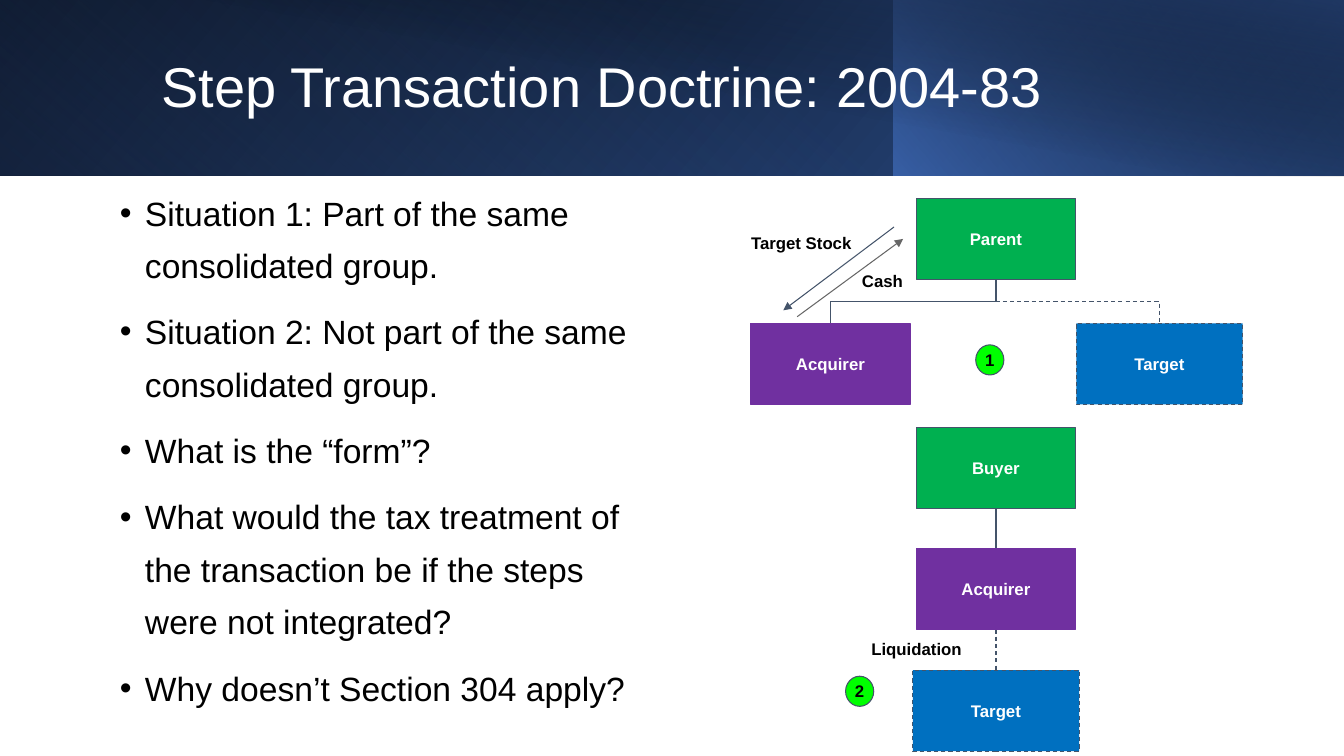
from lxml import etree
from pptx import Presentation
from pptx import util as u
from pptx.dml.color import RGBColor
from pptx.enum import dml, shapes, text
from pptx.oxml.ns import qn

# Content: all lengths in centimetres
TITLE = "Step Transaction Doctrine: 2004-83"
POINTS = [
    "Situation 1: Part of the same consolidated group.",
    "Situation 2: Not part of the same consolidated group.",
    "What is the “form”?",
    "What would the tax treatment of the transaction be if the steps were not integrated?",
    "Why doesn’t Section 304 apply?",
]
GREEN, PURPLE, BLUE, SLATE, GREY = "00B050", "7030A0", "0070C0", "44546A", "666666"
WHITE, BLACK, LIME = "FFFFFF", "000000", "00FF00"

# Banner layers: left, width, height, rotation, flip, angle, stops (place, colour, opacity)
BANNER = [
    (0, 33.87, 4.42, 0, True, 140, [(0, "000000", 100), (100, "2F5597", 100)]),
    (0, 22.56, 4.42, 180, True, 230, [(20, "4472C4", 0), (100, "203864", 55)]),
    (22.53, 11.33, 4.42, 0, True, 220, [(0, "4472C4", 66), (100, "000000", 30)]),
    (1.27, 32.59, 4.45, 0, False, 280, [(50, "000000", 0), (99, "203864", 52)]),
]
MID, LEFT, RIGHT = 25.1, 20.93, 29.22
WIDE, TALL = 4.01, 2.04
# Boxes: name, centre, top, width, fill, line, dashed
BOXES = [
    ("Parent", MID, 5.0, WIDE, GREEN, SLATE, False),
    ("Acquirer", LEFT, 8.15, WIDE, PURPLE, PURPLE, False),
    ("Target", RIGHT, 8.15, 4.19, BLUE, SLATE, True),
    ("Buyer", MID, 10.78, WIDE, GREEN, SLATE, False),
    ("Acquirer", MID, 13.82, WIDE, PURPLE, PURPLE, False),
    ("Target", MID, 16.89, 4.19, BLUE, SLATE, True),
]
STEPS = [("1", 24.59, 8.69), ("2", 21.31, 17.04)]
LABELS = [
    ("Cash", 20.4, 6.58, 3.68, 0.76),
    ("Target Stock", 18.67, 5.61, 3.05, 1.42),
    ("Liquidation", 21.26, 15.85, 3.68, 0.76),
]
# Arrows: tip, tail, colour
ARROWS = [((22.76, 6.02), (20.09, 7.98), GREY), ((19.74, 7.82), (22.53, 5.72), SLATE)]

deck = Presentation()
deck.slide_width, deck.slide_height = u.Cm(33.87), u.Cm(19.05)
slide = deck.slides.add_slide(deck.slide_layouts[5])
parts = slide.shapes


def cms(*vals):
    return [u.Cm(v) for v in vals]


def rgb(code):
    return RGBColor.from_string(code)


def sub(node, tag, **attrs):
    return etree.SubElement(node, qn(tag), {k: str(v) for k, v in attrs.items()})


def stroke(line, color, dash=False):
    line.color.rgb = rgb(color)
    line.width = u.Pt(0.75)
    if dash:
        line.dash_style = dml.MSO_LINE.DASH


def style(para, size, color, bold=False):
    para.font.name, para.font.size, para.font.bold = "Arial", u.Pt(size), bold
    para.font.color.rgb = rgb(color)


def write(shape, words, color, pad=0.25, anchor=text.MSO_ANCHOR.MIDDLE):
    frame = shape.text_frame
    frame.word_wrap, frame.vertical_anchor = True, anchor
    frame.margin_left = frame.margin_right = u.Cm(pad)
    frame.margin_top = frame.margin_bottom = u.Cm(pad)
    frame.text = words
    para = frame.paragraphs[0]
    para.alignment = text.PP_ALIGN.CENTER
    style(para, 12, color, True)


def block(kind, x, y, w, h, fill, line, dash=False):
    shape = parts.add_shape(kind, *cms(x, y, w, h))
    shape.shadow.inherit = False
    shape.fill.solid()
    shape.fill.fore_color.rgb = rgb(fill)
    stroke(shape.line, line, dash)
    return shape


def link(a, b, color=SLATE, dash=False, kind=shapes.MSO_CONNECTOR.STRAIGHT):
    wire = parts.add_connector(kind, *cms(*a, *b))
    stroke(wire.line, color, dash)
    sub(wire._element.spPr, "a:effectLst")
    return wire


def branch(a, b, dash=False):
    """Elbow that leaves a downward: a turned box around the same centre."""
    mx, my = (a[0] + b[0]) / 2, (a[1] + b[1]) / 2
    drop, span = b[1] - a[1], abs(b[0] - a[0])
    side = 1 if b[0] < a[0] else -1
    dx, dy = side * drop / 2, span / 2
    wire = link((mx - dx, my - dy), (mx + dx, my + dy), dash=dash,
                kind=shapes.MSO_CONNECTOR.ELBOW)
    turn = 90 if side > 0 else 270
    wire._element.spPr.find(qn("a:xfrm")).set("rot", str(turn * 60000))


# Banner
for x, w, h, turn, flip, angle, stops in BANNER:
    layer = parts.add_shape(shapes.MSO_SHAPE.RECTANGLE, *cms(x, 0, w, h))
    layer.shadow.inherit = False
    layer.line.fill.background()
    layer.rotation = turn
    props = layer._element.spPr
    if flip:
        props.find(qn("a:xfrm")).set("flipH", "1")
    grad = etree.Element(qn("a:gradFill"))
    marks = sub(grad, "a:gsLst")
    for place, color, solid in stops:
        tint = sub(sub(marks, "a:gs", pos=place * 1000), "a:srgbClr", val=color)
        if solid < 100:
            sub(tint, "a:alpha", val=solid * 1000)
    sub(grad, "a:lin", ang=angle * 60000, scaled=0)
    props.find(qn("a:prstGeom")).addnext(grad)

# Title, brought in front of the banner
title = parts.title
title.left, title.top, title.width, title.height = cms(3.81, 0.81, 27.48, 2.87)
title.text_frame.text = TITLE
title.text_frame.vertical_anchor = text.MSO_ANCHOR.MIDDLE
head = title.text_frame.paragraphs[0]
head.alignment, head.line_spacing = text.PP_ALIGN.LEFT, 0.9
style(head, 40, WHITE)
parts._spTree.append(title._element)

# Bullets
body = parts.add_textbox(*cms(2.77, 4.42, 13.36, 14.2)).text_frame
body.word_wrap = True
for i, point in enumerate(POINTS):
    para = body.add_paragraph() if i else body.paragraphs[0]
    para.text = point
    para.line_spacing, para.space_before = 1.3, u.Pt(10)
    style(para, 24, BLACK)
    props = para._p.get_or_add_pPr()
    props.set("marL", "228600")
    props.set("indent", "-228600")
    bullet = etree.Element(qn("a:buChar"), char="•")
    props.find(qn("a:spcBef")).addnext(bullet)
    bullet.addprevious(etree.Element(qn("a:buFont"), typeface="Arial"))

# Ownership lines
fork = (MID, 5.0 + TALL)
branch(fork, (LEFT, 8.15))
branch(fork, (RIGHT, 8.15), dash=True)
link((MID, 10.78 + TALL), (MID, 13.82))
link((MID, 13.82 + TALL), (MID, 16.89), dash=True)

# Company boxes and step numbers
for name, mid, top, w, fill, line, dash in BOXES:
    box = block(shapes.MSO_SHAPE.RECTANGLE, mid - w / 2, top, w, TALL, fill, line, dash)
    write(box, name, WHITE)
for num, x, y in STEPS:
    write(block(shapes.MSO_SHAPE.OVAL, x, y, 0.71, 0.76, LIME, SLATE), num, BLACK, 0)

# Exchange arrows and labels
for tip, tail, color in ARROWS:
    arrow = link(tip, tail, color)
    sub(arrow.line._get_or_add_ln(), "a:headEnd", type="triangle")
for words, *place in LABELS:
    write(parts.add_textbox(*cms(*place)), words, BLACK, anchor=text.MSO_ANCHOR.TOP)

deck.save("out.pptx")
